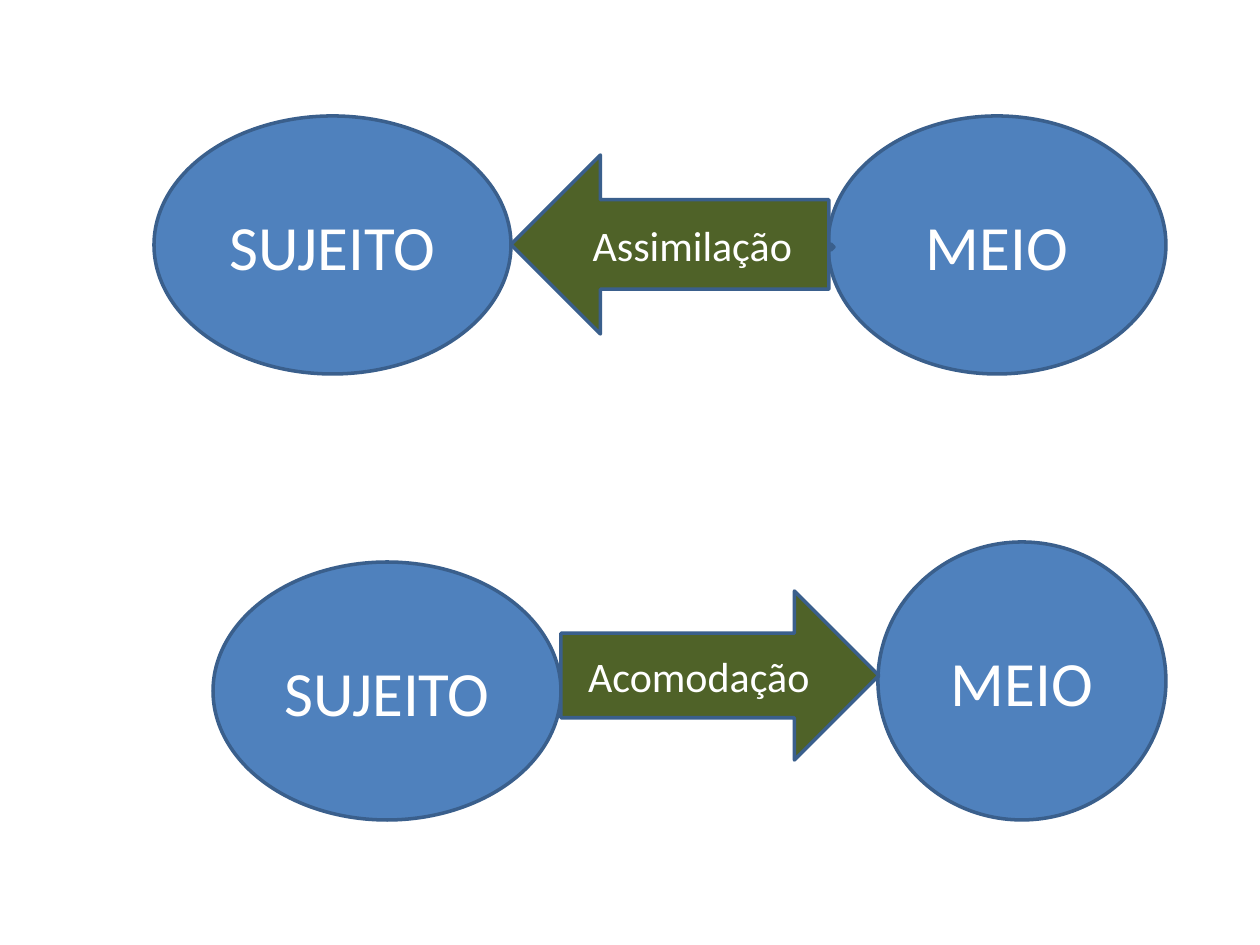
from dataclasses import dataclass

from pptx import Presentation
from pptx import util as u
from pptx.dml.color import RGBColor
from pptx.enum import shapes, text

PX = u.Inches(1) // 126  # EMU per px

BLUE = RGBColor(0x4F, 0x81, 0xBD)
OUTLINE = RGBColor(0x3A, 0x5F, 0x8C)
GREEN = RGBColor(0x4F, 0x62, 0x28)
WHITE = RGBColor(0xFF, 0xFF, 0xFF)

OVAL = shapes.MSO_SHAPE.OVAL
LEFT = shapes.MSO_SHAPE.LEFT_ARROW
RIGHT = shapes.MSO_SHAPE.RIGHT_ARROW


@dataclass
class Node:
    kind: shapes.MSO_SHAPE
    x: int
    y: int
    w: int
    h: int
    fill: RGBColor
    label: str = ""
    size: int = 36


NODES = [
    # Subject and environment, upper then lower pair
    Node(OVAL, 154, 116, 357, 258, BLUE, "SUJEITO"),
    Node(OVAL, 828, 116, 338, 258, BLUE, "MEIO"),
    Node(OVAL, 213, 562, 348, 258, BLUE, "SUJEITO"),
    Node(OVAL, 878, 542, 288, 278, BLUE, "MEIO"),
    # Small arrow at the edge of the upper environment
    Node(RIGHT, 828, 244, 6, 6, BLUE),
    # Processes between the pairs
    Node(LEFT, 511, 155, 318, 179, GREEN, "Assimilação", 24),
    Node(RIGHT, 561, 591, 318, 169, GREEN, "Acomodação", 24),
]


def draw_node(s, node: Node) -> None:
    sp = s.shapes.add_shape(
        node.kind, *(v * PX for v in (node.x, node.y, node.w, node.h)))
    sp.shadow.inherit = False
    sp.fill.solid()
    sp.fill.fore_color.rgb = node.fill
    sp.line.color.rgb = OUTLINE
    sp.line.width = u.Pt(2)
    if not node.label:
        return
    tf = sp.text_frame
    tf.word_wrap = True
    tf.vertical_anchor = text.MSO_ANCHOR.MIDDLE
    p = tf.paragraphs[0]
    p.alignment = text.PP_ALIGN.CENTER
    r = p.add_run()
    r.text = node.label
    r.font.name = "Calibri"
    r.font.size = u.Pt(node.size)
    r.font.color.rgb = WHITE


def main() -> None:
    prs = Presentation()
    prs.slide_width, prs.slide_height = u.Inches(10), u.Inches(7.5)
    s = prs.slides.add_slide(prs.slide_layouts[6])
    for node in NODES:
        draw_node(s, node)
    prs.save("out.pptx")


if __name__ == "__main__":
    main()
